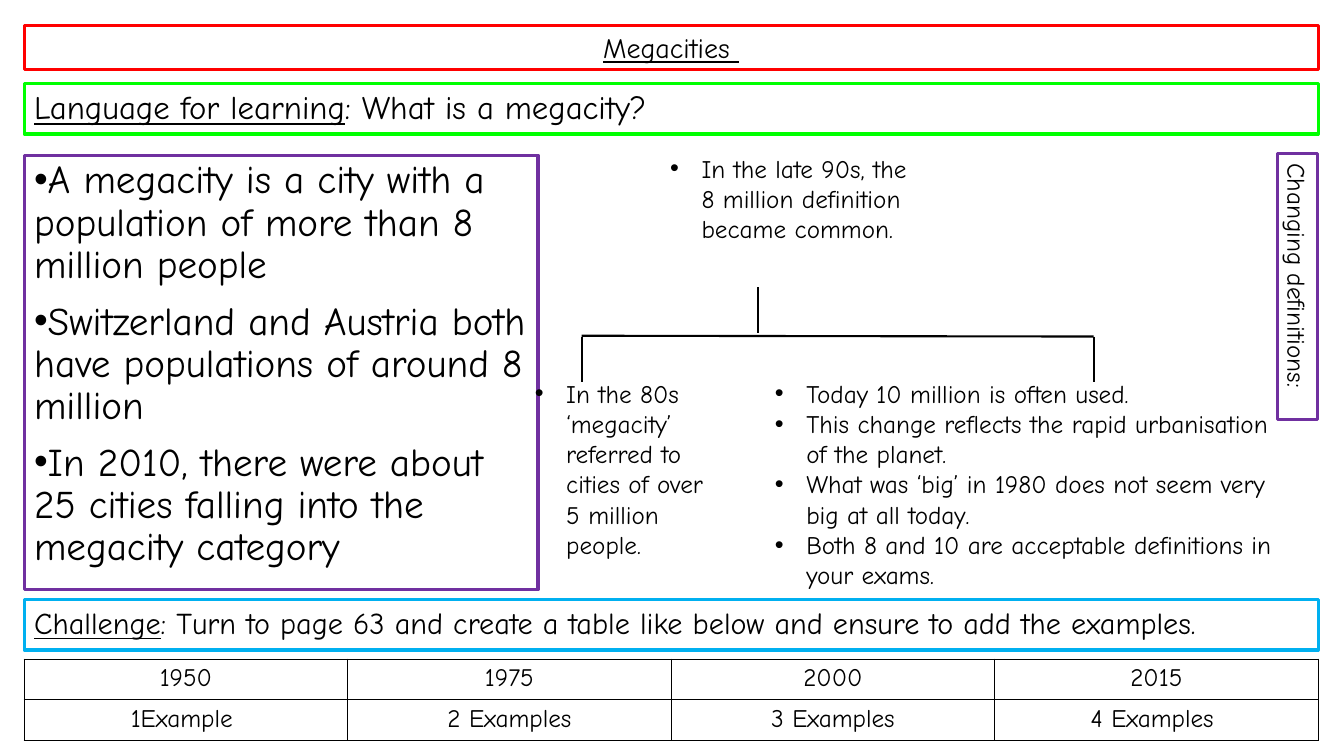
from lxml import etree
from pptx import Presentation
from pptx.dml.color import RGBColor
from pptx.enum.shapes import MSO_CONNECTOR, MSO_SHAPE
from pptx.enum.text import MSO_ANCHOR, PP_ALIGN
from pptx.oxml.ns import qn
from pptx.util import Cm, Pt

STRAIGHT = MSO_CONNECTOR.STRAIGHT
RECTANGLE = MSO_SHAPE.RECTANGLE
TOP, MIDDLE = MSO_ANCHOR.TOP, MSO_ANCHOR.MIDDLE
LEFT, CENTER = PP_ALIGN.LEFT, PP_ALIGN.CENTER

BLACK = RGBColor(0x00, 0x00, 0x00)
RED = RGBColor(0xFF, 0x00, 0x00)
GREEN = RGBColor(0x00, 0xFF, 0x00)
PURPLE = RGBColor(0x70, 0x30, 0xA0)
BLUE = RGBColor(0x00, 0xB0, 0xF0)
FONT = "Comic Neue"

TITLE = "Megacities "
# top, heading, rest of the line, size, frame colour
BANNERS = [
    (2.11, "Language for learning", ": What is a megacity?", 23.4, GREEN),
    (15.11, "Challenge",
     ": Turn to page 63 and create a table like below and ensure to add the examples.",
     21.6, BLUE),
]
FACTS = [
    "A megacity is a city with a population of more than 8 million people",
    "Switzerland and Austria both have populations of around 8 million",
    "In 2010, there were about 25 cities falling into the megacity category",
]
CHANGING = "Changing definitions:"
# left, top, width, height, bullets
DEFINITIONS = [
    (16.64, 3.73, 6.55, 3.33,
     ["In the late 90s, the 8 million definition became common."]),
    (13.23, 9.4, 5.0, 5.64,
     ["In the 80s ‘megacity’ referred to cities of over 5 million people."]),
    (19.28, 9.4, 13.61, 5.64,
     ["Today 10 million is often used.",
      "This change reflects the rapid urbanisation of the planet.",
      "What was ‘big’ in 1980 does not seem very big at all today.",
      "Both 8 and 10 are acceptable definitions in your exams."]),
]
EXAMPLES = [
    ["1950", "1975", "2000", "2015"],
    ["1Example ", "2 Examples", "3 Examples", "4 Examples "],
]

MARGIN, FULL_WIDTH = 0.61, 32.61
TABLE_TOP, ROW_HEIGHT = 16.61, 1.02
STEM_X, STEM_TOP, STEM_BOTTOM = 19.1, 7.24, 8.38
BRANCH_LEFT, BRANCH_RIGHT = 14.66, 27.56
BRANCH_Y, BRANCH_BOTTOM = 8.48, 9.63
BRANCHES = [
    (STEM_X, STEM_TOP, STEM_X, STEM_BOTTOM),
    (BRANCH_LEFT, BRANCH_Y - 0.02, BRANCH_RIGHT, BRANCH_Y),
    (BRANCH_LEFT, BRANCH_Y, BRANCH_LEFT, BRANCH_BOTTOM),
    (BRANCH_RIGHT, BRANCH_Y, BRANCH_RIGHT, BRANCH_BOTTOM),
]

prs = Presentation()
prs.slide_width, prs.slide_height = Cm(33.87), Cm(19.05)
slide = prs.slides.add_slide(prs.slide_layouts[6])


def style_run(run, size, underline=False):
    run.font.name = FONT
    run.font.size = Pt(size)
    run.font.color.rgb = BLACK
    run.font.underline = underline


def add_frame(left, top, width, height, colour, anchor=TOP):
    """Add an unfilled rectangle with a coloured outline."""
    frame = slide.shapes.add_shape(RECTANGLE, Cm(left), Cm(top), Cm(width), Cm(height))
    frame.shadow.inherit = False
    frame.fill.background()
    frame.line.color.rgb = colour
    frame.line.width = Pt(2.25)
    frame.text_frame.word_wrap = True
    frame.text_frame.vertical_anchor = anchor
    return frame


def write_line(paragraph, text, size, align=LEFT, underline=False):
    paragraph.text = text
    paragraph.alignment = align
    style_run(paragraph.runs[0], size, underline)


def write_bullets(text_frame, bullets, size, hanging=0.0, spacing=None, before=0):
    text_frame.word_wrap = True
    text_frame.text = "\n".join(bullets)
    for paragraph in text_frame.paragraphs:
        paragraph.alignment = LEFT
        paragraph.line_spacing = spacing
        paragraph.space_before = Pt(before)
        style_run(paragraph.runs[0], size)
        props = paragraph._p.get_or_add_pPr()
        props.set("marL", str(Cm(hanging)))
        props.set("indent", str(-Cm(hanging)))
        etree.SubElement(props, qn("a:buFont"), typeface="Arial")
        etree.SubElement(props, qn("a:buChar"), char="•")


def add_borders(cell):
    props = cell._tc.get_or_add_tcPr()
    for place, side in enumerate(("a:lnL", "a:lnR", "a:lnT", "a:lnB")):
        border = etree.Element(qn(side), w=str(Pt(1)))
        fill = etree.SubElement(border, qn("a:solidFill"))
        etree.SubElement(fill, qn("a:srgbClr"), val=str(BLACK))
        props.insert(place, border)


title = add_frame(MARGIN, 0.64, FULL_WIDTH, 1.12, RED)
write_line(title.text_frame.paragraphs[0], TITLE, 20, CENTER, underline=True)

for top, heading, rest, size, colour in BANNERS:
    banner = add_frame(MARGIN, top, FULL_WIDTH, 1.27, colour, MIDDLE)
    sentence = banner.text_frame.paragraphs[0]
    write_line(sentence, heading, size, underline=True)
    sentence.line_spacing = 0.9
    remainder = sentence.add_run()
    remainder.text = rest
    style_run(remainder, size)

facts = add_frame(MARGIN, 3.91, 12.95, 10.95, PURPLE)
write_bullets(facts.text_frame, FACTS, 28, spacing=0.9, before=10)

changing = add_frame(29.34, 6.71, 6.71, 1.02, PURPLE)
changing.rotation = 90
changing.text_frame.word_wrap = False
write_line(changing.text_frame.paragraphs[0], CHANGING, 18)

for left, top, width, height, bullets in DEFINITIONS:
    definition = slide.shapes.add_textbox(Cm(left), Cm(top), Cm(width), Cm(height))
    write_bullets(definition.text_frame, bullets, 18, hanging=0.79)

for ends in BRANCHES:
    branch = slide.shapes.add_connector(STRAIGHT, *map(Cm, ends))
    branch.line.color.rgb = BLACK
    branch.line.width = Pt(1.5)
    etree.SubElement(branch._element.spPr, qn("a:effectLst"))

examples = slide.shapes.add_table(
    len(EXAMPLES), len(EXAMPLES[0]), Cm(MARGIN), Cm(TABLE_TOP),
    Cm(FULL_WIDTH), Cm(ROW_HEIGHT * len(EXAMPLES))).table
examples.first_row = examples.horz_banding = False
for r, row in enumerate(EXAMPLES):
    for c, text in enumerate(row):
        cell = examples.cell(r, c)
        cell.fill.background()
        add_borders(cell)
        write_line(cell.text_frame.paragraphs[0], text, 18, CENTER)

prs.save("out.pptx")
